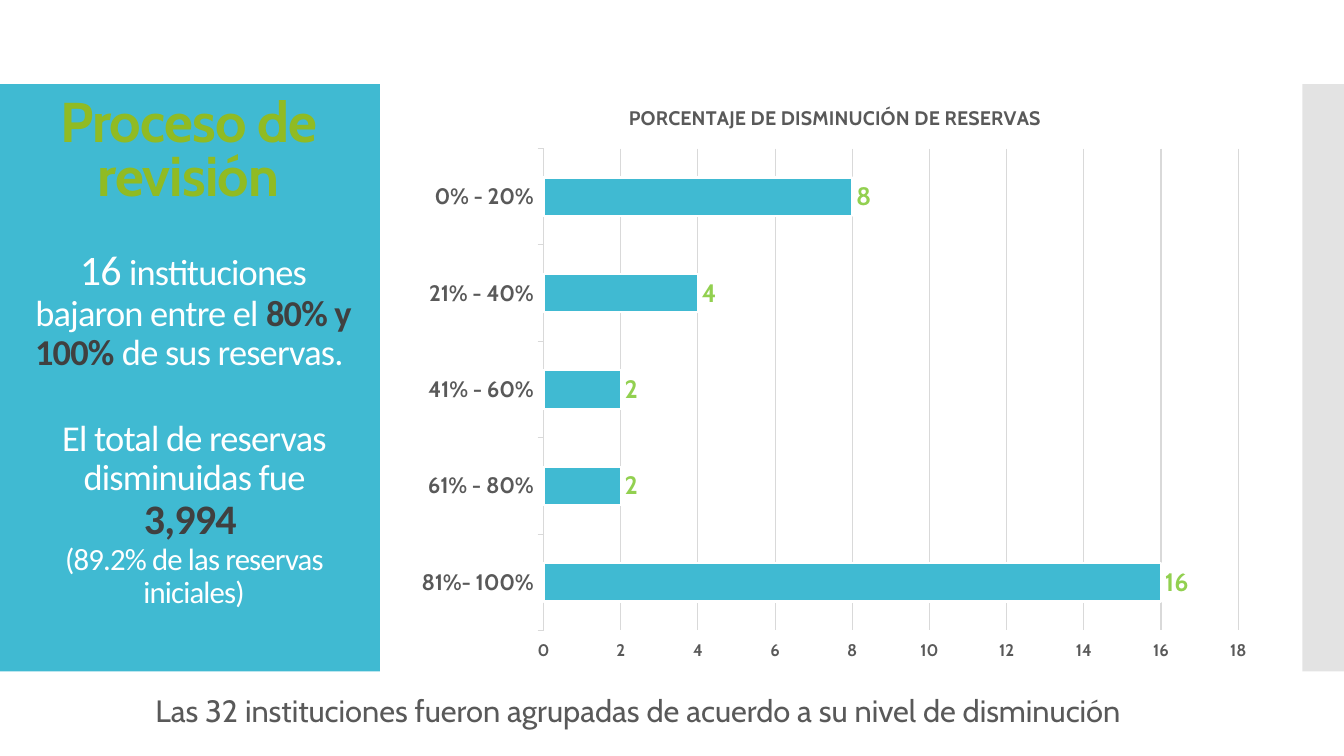
from lxml import etree
from pptx import Presentation
from pptx.chart.data import CategoryChartData
from pptx.dml.color import RGBColor
from pptx.enum.chart import XL_CHART_TYPE as Kind, XL_LABEL_POSITION as Pos, XL_TICK_MARK as Tick
from pptx.enum.shapes import MSO_SHAPE as Shape
from pptx.enum.text import MSO_ANCHOR as Anchor, PP_ALIGN as Align
from pptx.oxml import parse_xml
from pptx.oxml.ns import nsdecls, qn
from pptx.util import Pt

BLUE, GREEN, LIME = "40BAD2", "90BB23", "92D050"
WHITE, DARK, GRAY, PALE = "FFFFFF", "404040", "595959", "D9D9D9"


def rgb(code):
    return RGBColor.from_string(code)


def style(font, size, color, bold=False, name="Cabin"):
    font.size, font.bold, font.name = Pt(size), bold, name
    font.color.rgb = rgb(color)


prs = Presentation()
prs.slide_width, prs.slide_height = Pt(960), Pt(540)
slide = prs.slides.add_slide(prs.slide_layouts[6])
shapes = slide.shapes

# Side bands
for left, width, color in [(0, 271.4, BLUE), (930.2, 29.8, "C8C8C8")]:
    band = shapes.add_shape(Shape.RECTANGLE, Pt(left), Pt(60), Pt(width), Pt(419.5))
    band.shadow.inherit = False
    band.fill.solid()
    band.fill.fore_color.rgb = rgb(color)
    band.line.fill.background()
tint = band.fill._xPr.find(".//" + qn("a:srgbClr"))
etree.SubElement(tint, qn("a:alpha")).set("val", "50000")

# Texts: box, anchor, line spacing, space before, letter spacing, font, paragraphs
texts = [
    ((0, 69.1, 269.3, 80.6), Anchor.MIDDLE, 0.8, 0, -60, "Cabin",
     [[("Proceso de revisión", 40, GREEN, True)]]),
    ((18, 327.6, 241.2, 80.6), Anchor.MIDDLE, 0.9, 0, -60, "Calibri",
     [[("El total de reservas disminuidas fue ", 26, WHITE, False),
       ("3,994", 30, DARK, True), (" ", 24, DARK, True)],
      [("(89.2% de las reservas iniciales)", 22, WHITE, False)]]),
    ((17.3, 182.2, 241.2, 80.6), Anchor.MIDDLE, 0.9, 0, -60, "Calibri",
     [[("16", 30, WHITE, False),
       (" instituciones bajaron entre el ", 26, WHITE, False),
       ("80% y 100% ", 26, DARK, True),
       ("de sus reservas. ", 26, WHITE, False)]]),
    ((86.4, 493.2, 738.7, 27.4), Anchor.TOP, 0.9, 12, 0, "Cabin",
     [[("Las 32 instituciones fueron agrupadas de acuerdo a su nivel de disminución",
        22, GRAY, False)]]),
]
for box, anchor, lines, before, track, face, paras in texts:
    frame = shapes.add_textbox(*map(Pt, box)).text_frame
    frame.word_wrap = True
    frame.vertical_anchor = anchor
    for i, parts in enumerate(paras):
        para = frame.add_paragraph() if i else frame.paragraphs[0]
        para.alignment = Align.CENTER
        para.line_spacing = lines
        para.space_before = Pt(before)
        for words, size, color, bold in parts:
            run = para.add_run()
            run.text = words
            style(run.font, size, color, bold, face)
            if track:
                run._r.get_or_add_rPr().set("spc", str(track))

# Bar chart
data = CategoryChartData()
data.categories = ["81%- 100%", "61% - 80%", "41% - 60%", "21% - 40%", "0% - 20%"]
data.add_series("Series 1", [16, 2, 2, 4, 8])
chart = shapes.add_chart(Kind.BAR_CLUSTERED, Pt(290.2), Pt(60), Pt(612.7), Pt(419.8), data).chart
style(chart.font, 10, "000000")
chart.has_legend = False
chart.has_title = True
title = chart.chart_title.text_frame
title.text = "PORCENTAJE DE DISMINUCIÓN DE RESERVAS"
style(title.paragraphs[0].runs[0].font, 14, GRAY, True)

cats, vals = chart.category_axis, chart.value_axis
for axis, size in [(cats, 16), (vals, 12)]:
    style(axis.tick_labels.font, size, GRAY, True)
    axis.major_tick_mark = Tick.OUTSIDE
    axis.minor_tick_mark = Tick.NONE
vals.minimum_scale, vals.maximum_scale, vals.major_unit = 0, 18, 2
vals.format.line.fill.background()
vals.has_major_gridlines = True
for line in (cats.format.line, vals.major_gridlines.format.line):
    line.color.rgb = rgb(PALE)
    line.width = Pt(0.75)

plot = chart.plots[0]
plot.gap_width = 150
plot.vary_by_categories = False
bars = plot.series[0]
bars.format.fill.solid()
bars.format.fill.fore_color.rgb = rgb(BLUE)
bars.format.line.color.rgb = rgb(WHITE)
bars.format.line.width = Pt(1.5)
labels = bars.data_labels
labels.show_value = True
labels.position = Pos.OUTSIDE_END
style(labels.font, 18, LIME, True)

# Fixed plot area, as shares of the chart
area = chart._chartSpace.find(".//" + qn("c:plotArea"))
for old in area.findall(qn("c:layout")):
    area.remove(old)
sides = "".join(f'<c:{key} val="{share}"/>' for key, share in
                [("x", 0.16), ("y", 0.11), ("w", 0.81), ("h", 0.82)])
area.insert(0, parse_xml(
    f'<c:layout {nsdecls("c")}><c:manualLayout><c:layoutTarget val="inner"/>'
    f'<c:xMode val="edge"/><c:yMode val="edge"/>{sides}</c:manualLayout></c:layout>'))

prs.save("out.pptx")
